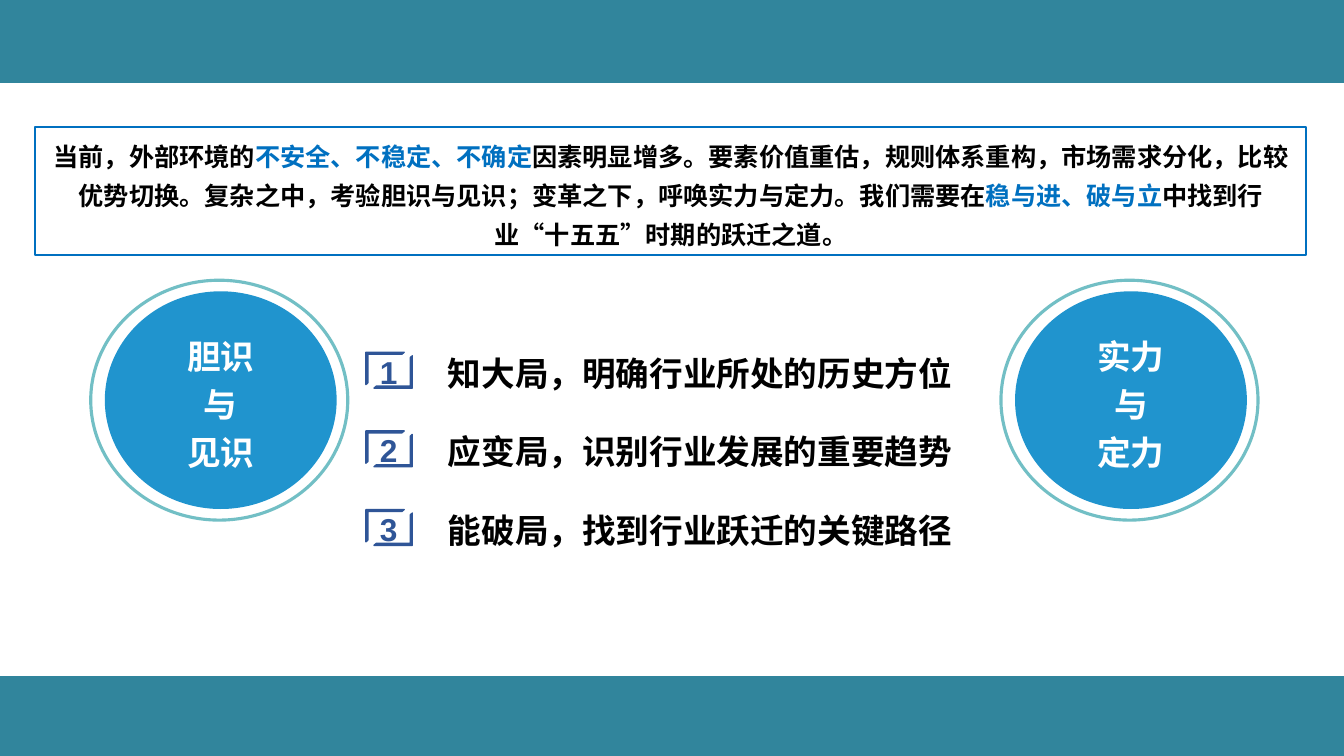
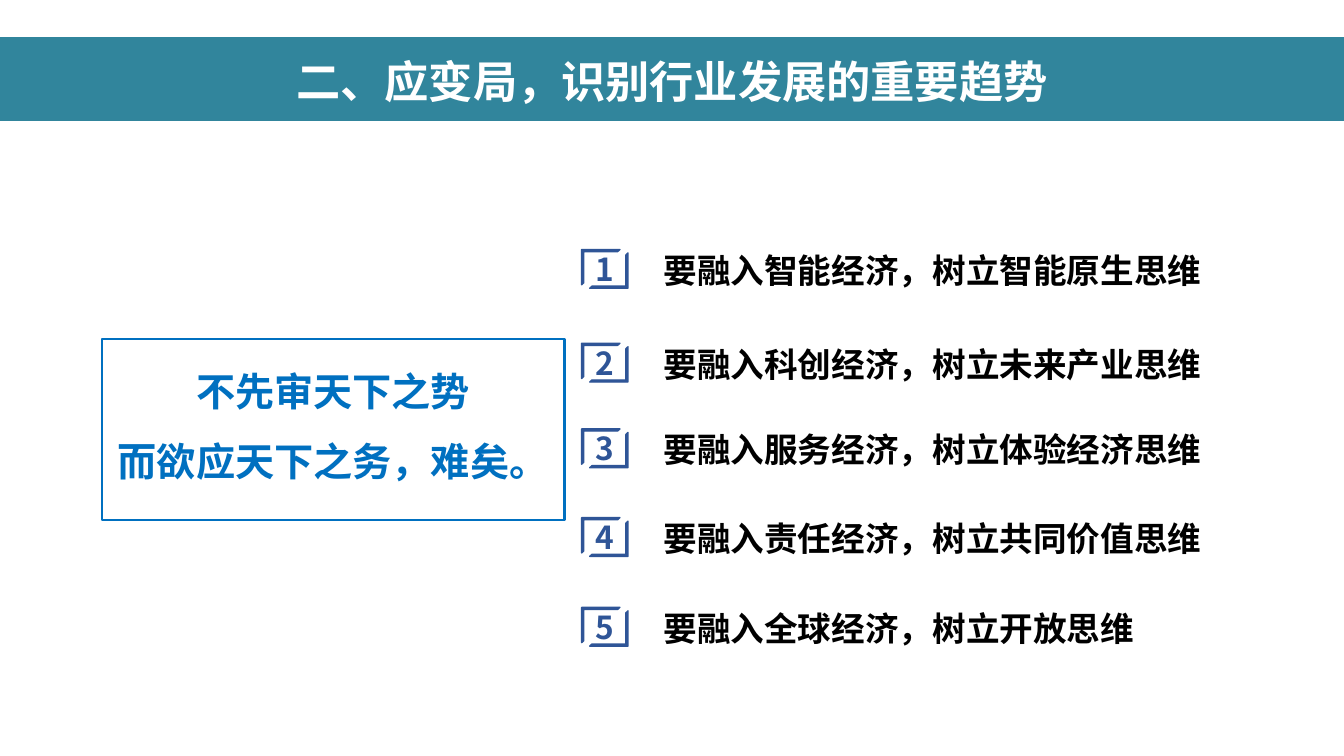
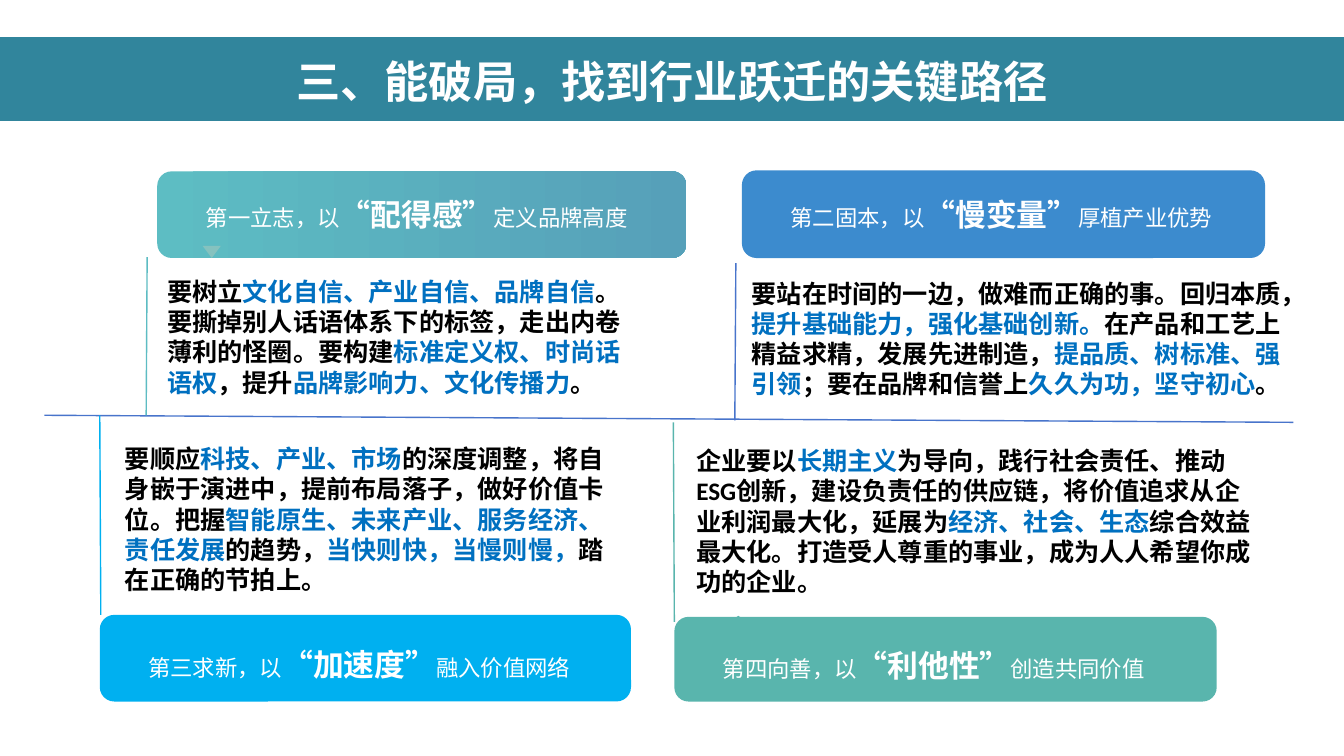
from dataclasses import dataclass
from itertools import cycle
from typing import Any, NamedTuple, Optional

from lxml.etree import SubElement
from pptx import Presentation
from pptx.dml.color import RGBColor
from pptx.enum.shapes import MSO_CONNECTOR, MSO_SHAPE as Preset
from pptx.enum.text import MSO_ANCHOR as Anchor, PP_ALIGN as Align
from pptx.oxml.ns import qn
from pptx.util import Inches, Length, Pt

# Grid of cells, ten to the inch
COLUMNS, ROWS = 133.33, 75
TEAL, NAVY, BLUE, SKY = "31859C", "2F5597", "0070C0", "2094CE"
RING, INDIGO, BLACK, WHITE = "72BFC5", "4874CB", "000000", "FFFFFF"
CJK, LATIN, DIGIT = "Noto Sans CJK SC", "Calibri", "Arial"


class Area(NamedTuple):
    col: float
    row: float
    cols: float
    rows: float


class Span(NamedTuple):
    text: str
    size: float
    color: str = BLACK
    bold: bool = True
    font: str = CJK


Lines = list[list[Span]]


@dataclass
class Pointer:
    area: Area
    color: str
    turn: int = 0


@dataclass
class Topic:
    banner: Area
    fills: tuple[str, ...]
    heading: tuple[str, str, str]
    pointer: Pointer
    body: Area
    phrases: tuple[str, ...]
    stem: tuple[float, float, float, float]
    stem_color: str
    spacing: float = 1.0


def cells(count: float) -> Length:
    return Inches(count / 10)


def rgb(code: str) -> RGBColor:
    return RGBColor.from_string(code)


def assign(target: Any, values: dict[str, Any]) -> None:
    for name, value in values.items():
        setattr(target, name, value)


def write(box: Any, lines: Lines, align: Align = Align.LEFT, spacing: float = 1.0,
          anchor: Anchor = Anchor.TOP, inset: tuple[float, float] = (1, 0.5)) -> None:
    frame = box.text_frame
    side, end = map(cells, inset)
    assign(frame, dict(word_wrap=True, vertical_anchor=anchor, margin_left=side,
                       margin_right=side, margin_top=end, margin_bottom=end))
    for index, line in enumerate(lines):
        para = frame.add_paragraph() if index else frame.paragraphs[0]
        assign(para, dict(alignment=align, line_spacing=spacing))
        for span in line:
            run = para.add_run()
            run.text = span.text
            assign(run.font, dict(size=Pt(span.size), bold=span.bold, name=span.font))
            run.font.color.rgb = rgb(span.color)
            SubElement(run.font._element, qn("a:ea"), typeface=CJK)


def add_text(page: Any, area: Area, lines: Lines, align: Align = Align.LEFT) -> None:
    write(page.shapes.add_textbox(*map(cells, area)), lines, align)


def add_shape(page: Any, preset: Preset, area: Area, fills: tuple[str, ...] = (),
              line: Optional[str] = None, width: float = 1, turn: int = 0) -> Any:
    """Draw a preset with no fill, one fill, or a left-to-right blend of two."""
    box = page.shapes.add_shape(preset, *map(cells, area))
    box.shadow.inherit = False
    box.rotation = turn
    if len(fills) > 1:
        box.fill.gradient()
        box.fill.gradient_angle = 0
        for stop, color in zip(box.fill.gradient_stops, fills):
            stop.color.rgb = rgb(color)
    elif fills:
        box.fill.solid()
        box.fill.fore_color.rgb = rgb(fills[0])
    else:
        box.fill.background()
    if line:
        box.line.color.rgb = rgb(line)
        box.line.width = Pt(width)
    else:
        box.line.fill.background()
    return box


def add_line(page: Any, ends: tuple[float, ...], color: str) -> None:
    line = page.shapes.add_connector(MSO_CONNECTOR.STRAIGHT, *map(cells, ends))
    line.line.color.rgb = rgb(color)
    line.line.width = Pt(1)
    SubElement(line._element.spPr, qn("a:effectLst"))


def add_band(page: Any, row: float) -> None:
    add_shape(page, Preset.RECTANGLE, Area(0, row, COLUMNS, 8.2), (TEAL,), TEAL)


def add_title(page: Any, text: str) -> None:
    add_band(page, 3.7)
    add_text(page, Area(0, 4.9, COLUMNS, 6.5), [[Span(text, 31.6, WHITE)]], Align.CENTER)


def add_agenda(page: Any, col: float, rows: tuple[float, ...], items: tuple[str, ...],
               height: float, font: str) -> None:
    """Numbered lines, each number between two facing corner brackets."""
    for number, (row, item) in enumerate(zip(rows, items), 1):
        for shift, turn in ((0, 0), (1, 180)):
            corner = Area(col + 0.8 * shift, row + 0.45 + 0.35 * shift, 3.8, height)
            bracket = add_shape(page, Preset.HALF_FRAME, corner, (NAVY,), NAVY, turn=turn)
            for index in range(2):
                bracket.adjustments[index] = 0.06
        add_text(page, Area(col + 0.4, row, 3.7, 4.8),
                 [[Span(str(number), 22.6, NAVY, font=font)]], Align.CENTER)
        add_text(page, Area(col + 7.15, row, 60, 5), [[Span(item, 24)]])


def add_disc(page: Any, col: float, words: tuple[str, ...]) -> None:
    disc = add_shape(page, Preset.OVAL, Area(col + 1.4, 28.9, 23, 21.6), (SKY,))
    write(disc, [[Span(word, 24, WHITE)] for word in words], Align.CENTER, 1.2, Anchor.MIDDLE)
    add_shape(page, Preset.OVAL, Area(col, 27.8, 25.5, 23.8), (), RING, 2.25)


def alternate(phrases: tuple[str, ...], font: str) -> list[Span]:
    """Plain and highlighted stretches of text take turns."""
    return [Span(text, 18, color, font=font)
            for text, color in zip(phrases, cycle((BLACK, BLUE)))]


def add_topic(page: Any, topic: Topic) -> None:
    banner = add_shape(page, Preset.ROUNDED_RECTANGLE, topic.banner, topic.fills)
    lead, key, rest = topic.heading
    write(banner, [[Span(lead, 16, WHITE, False, LATIN), Span(key, 22, WHITE, True, LATIN),
                    Span(rest, 16, WHITE, False, LATIN)]],
          spacing=topic.spacing, anchor=Anchor.MIDDLE, inset=(4.4, 1.2))
    mark = topic.pointer
    add_shape(page, Preset.ISOSCELES_TRIANGLE, mark.area, (mark.color,), turn=mark.turn)
    add_text(page, topic.body, [alternate(topic.phrases, LATIN)])
    add_line(page, topic.stem, topic.stem_color)


INTRO = (
    "当前，外部环境的", "不安全、不稳定、不确定",
    "因素明显增多。要素价值重估，规则体系重构，市场需求分化，比较优势切换。"
    "复杂之中，考验胆识与见识；变革之下，呼唤实力与定力。我们需要在",
    "稳与进、破与立", "中找到行业“十五五”时期的跃迁之道。",
)
STEPS = ("知大局，明确行业所处的历史方位", "应变局，识别行业发展的重要趋势",
         "能破局，找到行业跃迁的关键路径")
TRENDS = ("要融入智能经济，树立智能原生思维", "要融入科创经济，树立未来产业思维",
          "要融入服务经济，树立体验经济思维", "要融入责任经济，树立共同价值思维",
          "要融入全球经济，树立开放思维")
TOPICS = (
    Topic(Area(15.6, 17, 52.5, 8.6), ("5DBDC3", "56A0B9"),
          ("第一立志，以", "“配得感”", "定义品牌高度"),
          Pointer(Area(20.1, 24.4, 1.8, 1.2), "85C2BF", 180),
          Area(15.6, 26.9, 49.3, 14.3),
          ("要树立", "文化自信、产业自信、品牌自信",
           "。要撕掉别人话语体系下的标签，走出内卷薄利的怪圈。要构建",
           "标准定义权、时尚话语权", "，提升", "品牌影响力、文化传播力", "。"),
          (14.6, 25.5, 14.5, 41.2), "5DBCC3"),
    Topic(Area(73.6, 16.9, 51.9, 8.7), ("3C8BCE",),
          ("第二固本，以", "“慢变量”", "厚植产业优势"),
          Pointer(Area(75, 23.2, 1.8, 1.2), "3C8BCE", 180),
          Area(73.6, 27.1, 55.3, 15),
          ("要站在时间的一边，做难而正确的事。回归本质，", "提升基础能力，强化基础创新。",
           "在产品和工艺上精益求精，发展先进制造，", "提品质、树标准、强引领",
           "；要在品牌和信誉上", "久久为功，坚守初心", "。"),
          (73, 26.1, 72.9, 41.7), INDIGO),
    Topic(Area(9.9, 61, 52.7, 8.6), ("00B0F0",),
          ("第三求新，以", "“加速度”", "融入价值网络"),
          Pointer(Area(15.6, 61.4, 3.3, 1.1), "00B0F0"),
          Area(11.4, 43.5, 51.3, 19.5),
          ("要顺应", "科技、产业、市场",
           "的深度调整，将自身嵌于演进中，提前布局落子，做好价值卡位。把握",
           "智能原生、未来产业、服务经济、责任发展", "的趋势，", "当快则快，当慢则慢，",
           "踏在正确的节拍上。"),
          (9.9, 41.2, 10, 61), "00B0F0", 1.3),
    Topic(Area(66.9, 61.2, 53.8, 8.4), ("59B5AD",),
          ("第四向善，以", "“利他性”", "创造共同价值"),
          Pointer(Area(71.6, 61.1, 3.3, 1.1), "59B5AD"),
          Area(68.1, 43.7, 57.4, 17.6),
          ("企业要以", "长期主义",
           "为导向，践行社会责任、推动ESG创新，建设负责任的供应链，"
           "将价值追求从企业利润最大化，延展为",
           "经济、社会、生态",
           "综合效益最大化。打造受人尊重的事业，成为人人希望你成功的企业。"),
          (66.8, 41.9, 66.9, 61.7), "59B5AD", 1.3),
)


def build_overview(page: Any) -> None:
    for row in (0, 67.1):
        add_band(page, row)
    add_disc(page, 9, ("胆识", "与", "见识"))
    add_disc(page, 99.3, ("实力", "与", "定力"))
    add_agenda(page, 36.3, (34.5, 42.3, 50.1), STEPS, 3.2, DIGIT)
    intro = add_shape(page, Preset.RECTANGLE, Area(3.5, 12.6, 126.1, 12.7), (), BLUE, 1.5)
    write(intro, [alternate(INTRO, CJK)], Align.CENTER, 1.3, Anchor.MIDDLE)


def build_trends(page: Any) -> None:
    add_title(page, "二、应变局，识别行业发展的重要趋势")
    quote = add_shape(page, Preset.RECTANGLE, Area(10.1, 33.6, 45.9, 18), (), BLUE, 1.5)
    write(quote, [[Span(text, 28, BLUE)] for text in ("不先审天下之势", "而欲应天下之务，难矣。")],
          Align.CENTER, 1.5)
    add_agenda(page, 57.7, (24.3, 33.6, 42.1, 50.9, 59.8), TRENDS, 3.5, CJK)


def build_paths(page: Any) -> None:
    add_title(page, "三、能破局，找到行业跃迁的关键路径")
    add_line(page, (4.4, 41.2, 128.3, 41.9), INDIGO)
    for topic in TOPICS:
        add_topic(page, topic)


def main() -> None:
    deck = Presentation()
    assign(deck, dict(slide_width=cells(COLUMNS), slide_height=cells(ROWS)))
    for build in (build_overview, build_trends, build_paths):
        build(deck.slides.add_slide(deck.slide_layouts[6]))
    deck.save("out.pptx")


if __name__ == "__main__":
    main()
